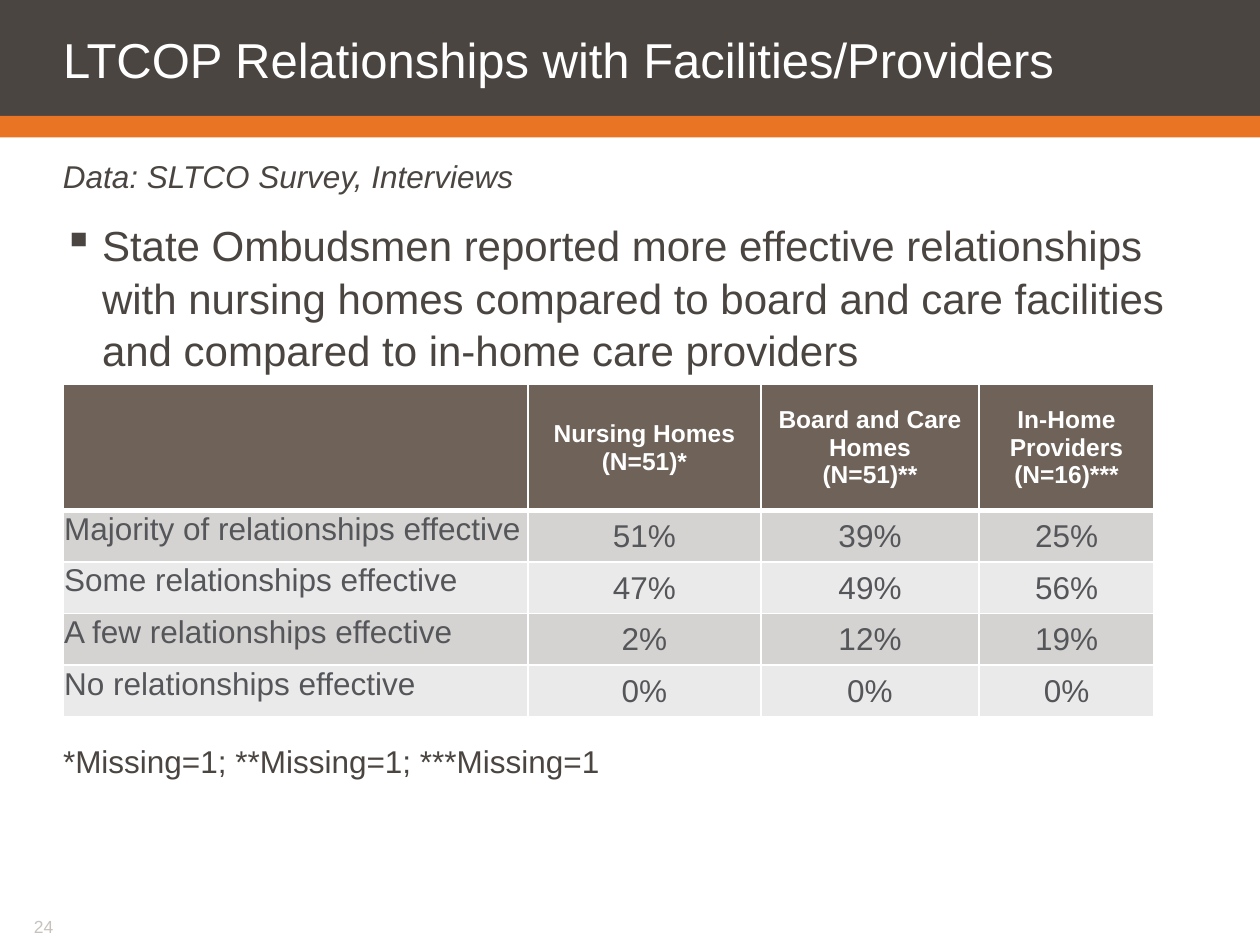
"""Build the slide on LTCOP relationships with facilities and providers."""
from lxml import etree
from pptx import Presentation
from pptx.dml.color import RGBColor
from pptx.enum import shapes, text
from pptx.oxml import ns
from pptx.util import Inches, Pt

COLORS = {
    "white": "FFFFFF",
    "dark": "4A4541",
    "orange": "E87424",
    "header": "6E6259",
    "band_dark": "D5D3D1",
    "band_light": "EBEAEA",
    "cell_text": "55565A",
    "number": "C8C2BF",
}
FONT = "Arial"
COLUMN_WIDTHS = [3.69, 1.85, 1.73, 1.39]
ROW_HEIGHTS = [1, 0.41, 0.41, 0.41, 0.41]
ROWS = [
    ["", "Nursing Homes\n(N=51)*", "Board and Care Homes\n(N=51)**",
     "In-Home Providers\n(N=16)***"],
    ["Majority of relationships effective", "51%", "39%", "25%"],
    ["Some relationships effective", "47%", "49%", "56%"],
    ["A few relationships effective", "2%", "12%", "19%"],
    ["No relationships effective", "0%", "0%", "0%"],
]


def rgb(name):
    return RGBColor.from_string(COLORS[name])


def style(paragraph, size, color, bold=False, italic=False):
    font = paragraph.font
    font.name, font.size = FONT, Pt(size)
    font.bold, font.italic = bold, italic
    font.color.rgb = rgb(color)


def set_margins(target, left, top, right, bottom):
    target.margin_left, target.margin_top = Inches(left), Inches(top)
    target.margin_right, target.margin_bottom = Inches(right), Inches(bottom)


def add_bar(slide, top, height, color):
    bar = slide.shapes.add_shape(
        shapes.MSO_SHAPE.RECTANGLE, 0, Inches(top), Inches(10), Inches(height))
    bar.shadow.inherit = False
    bar.fill.solid()
    bar.fill.fore_color.rgb = rgb(color)
    bar.line.fill.background()


def set_title(slide, words):
    title = slide.shapes.title
    title.left, title.top = 0, 0
    title.width, title.height = Inches(10), Inches(0.92)
    frame = title.text_frame
    frame.text = words
    frame.auto_size = text.MSO_AUTO_SIZE.NONE
    frame.vertical_anchor = text.MSO_ANCHOR.MIDDLE
    set_margins(frame, 0.5, 0.1, 0.1, 0)
    paragraph = frame.paragraphs[0]
    paragraph.alignment = text.PP_ALIGN.LEFT
    paragraph.line_spacing = Pt(28)
    style(paragraph, 28, "white")
    title.element.getparent().append(title.element)


def add_text(slide, box, words, size, color="dark", margins=(0, 0.05, 0, 0.05),
             italic=False, wrap=True):
    shape = slide.shapes.add_textbox(*[Inches(length) for length in box])
    frame = shape.text_frame
    frame.word_wrap = wrap
    set_margins(frame, *margins)
    frame.text = words
    paragraph = frame.paragraphs[0]
    style(paragraph, size, color, italic=italic)
    return paragraph


def add_bullet(paragraph, character, indent):
    properties = paragraph._p.get_or_add_pPr()
    properties.set("marL", str(Inches(indent)))
    properties.set("indent", str(-Inches(indent)))
    bullet = etree.Element(ns.qn("a:buChar"), char=character)
    default_run = properties.find(ns.qn("a:defRPr"))
    if default_run is None:
        properties.append(bullet)
    else:
        default_run.addprevious(bullet)


def set_borders(cell, bottom_width):
    properties = cell._tc.get_or_add_tcPr()
    for side, width in (("L", 1), ("R", 1), ("T", 1), ("B", bottom_width)):
        line = etree.SubElement(properties, ns.qn(f"a:ln{side}"), w=str(Pt(width)))
        fill = etree.SubElement(line, ns.qn("a:solidFill"))
        etree.SubElement(fill, ns.qn("a:srgbClr"), val=COLORS["white"])


def format_cell(cell, words, row, column):
    is_header = row == 0
    set_borders(cell, 3 if is_header else 1)
    band = "band_dark" if row % 2 else "band_light"
    cell.fill.solid()
    cell.fill.fore_color.rgb = rgb("header" if is_header else band)
    set_margins(cell, 0.01, 0.01, 0.01, 0)
    cell.text = words
    if column:
        cell.vertical_anchor = text.MSO_ANCHOR.MIDDLE
    for paragraph in cell.text_frame.paragraphs:
        paragraph.alignment = text.PP_ALIGN.CENTER if column else text.PP_ALIGN.LEFT
        if is_header:
            style(paragraph, 14, "white", bold=True)
        else:
            style(paragraph, 18, "cell_text")


def add_relationship_table(slide):
    table = slide.shapes.add_table(
        len(ROWS), len(COLUMN_WIDTHS), Inches(0.5), Inches(3.05),
        Inches(sum(COLUMN_WIDTHS)), Inches(sum(ROW_HEIGHTS))).table
    for column, width in zip(table.columns, COLUMN_WIDTHS):
        column.width = Inches(width)
    for row, height in zip(table.rows, ROW_HEIGHTS):
        row.height = Inches(height)
    for row, values in enumerate(ROWS):
        for column, words in enumerate(values):
            format_cell(table.cell(row, column), words, row, column)


def main():
    presentation = Presentation()
    presentation.slide_width, presentation.slide_height = Inches(10), Inches(7.5)
    slide = presentation.slides.add_slide(presentation.slide_layouts[5])

    add_bar(slide, 0, 0.92, "dark")
    add_text(slide, (0.17, 7.27, 1.92, 0.18), "24", 10, "number",
             margins=(0.1, 0, 0.1, 0.05), wrap=False)
    add_bar(slide, 0.92, 0.17, "orange")
    set_title(slide, "LTCOP Relationships with Facilities/Providers")
    add_text(slide, (0, 1.22, 10, 0.33), "Data: SLTCO Survey, Interviews", 18,
             margins=(0.5, 0.03, 0, 0), italic=True)
    finding = add_text(
        slide, (0.5, 1.67, 8.92, 1.38),
        "State Ombudsmen reported more effective relationships with nursing homes "
        "compared to board and care facilities and compared to in-home care providers",
        24)
    finding.line_spacing = 1.05
    add_bullet(finding, "▪", 0.31)
    add_relationship_table(slide)
    add_text(slide, (0.5, 5.84, 8.92, 0.47),
             "*Missing=1; **Missing=1; ***Missing=1", 18)
    presentation.save("out.pptx")


if __name__ == "__main__":
    main()
